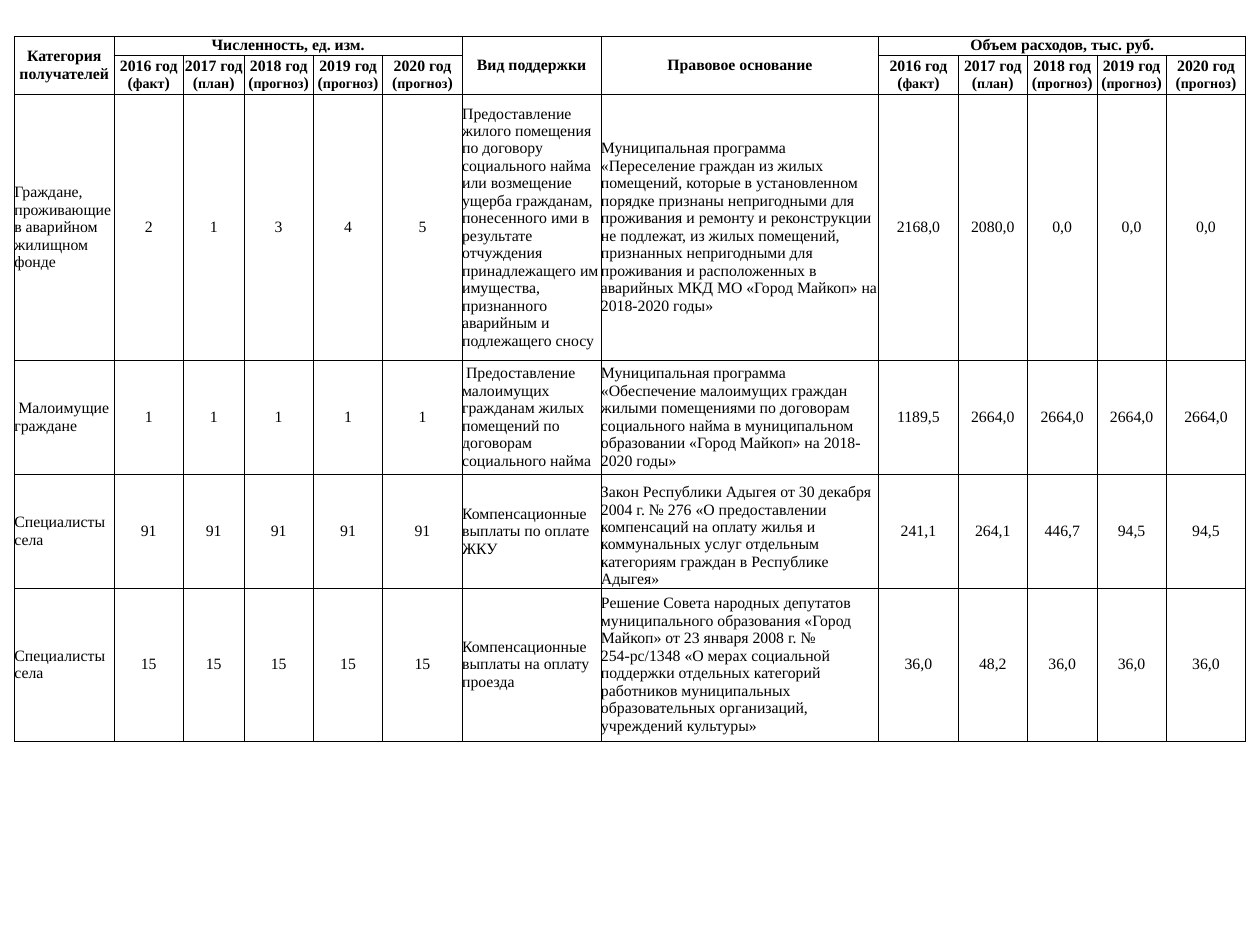
import dataclasses
import lxml.etree
import pptx
import pptx.dml.color
import pptx.enum.text
import pptx.oxml.ns
import pptx.util

Cm = pptx.util.Cm
Pt = pptx.util.Pt
qn = pptx.oxml.ns.qn
align = pptx.enum.text.PP_ALIGN
anchor = pptx.enum.text.MSO_ANCHOR


@dataclasses.dataclass
class Theme:
    face: str = "Times New Roman"
    ink: str = "000000"
    size: float = 9
    small: float = 8
    rule: float = 0.5


theme = Theme()


def border(cell):
    props = cell._tc.get_or_add_tcPr()
    for side in ("lnL", "lnR", "lnT", "lnB"):
        line = lxml.etree.SubElement(props, qn(f"a:{side}"), w=str(Pt(theme.rule)))
        fill = lxml.etree.SubElement(line, qn("a:solidFill"))
        lxml.etree.SubElement(fill, qn("a:srgbClr"), val=theme.ink)


def style(cell, bold, place):
    cell.margin_left = cell.margin_right = cell.margin_top = cell.margin_bottom = 0
    cell.vertical_anchor = anchor.MIDDLE
    par = cell.text_frame.paragraphs[0]
    par.alignment = place
    par.font.name = theme.face
    par.font.size = Pt(theme.size)
    par.font.bold = bold
    par.font.color.rgb = pptx.dml.color.RGBColor.from_string(theme.ink)
    border(cell)
    cell.fill.background()
    return par


deck = pptx.Presentation()
deck.slide_width = Cm(25.4)
deck.slide_height = Cm(19.05)
slide = deck.slides.add_slide(deck.slide_layouts[6])

widths = [2.01, 1.4, 1.22, 1.4, 1.4, 1.6, 2.8, 5.6, 1.6, 1.4, 1.4, 1.4, 1.6]
heights = [0.38, 0.79, 5.36, 2.3, 2.3, 3.08]
years = [("2016", "факт"), ("2017", "план"), ("2018", "прогноз"),
         ("2019", "прогноз"), ("2020", "прогноз")]
heads = [
    (0, "Категория получателей", 1, 0),
    (1, "Численность, ед. изм.", 0, 5),
    (6, "Вид поддержки", 1, 6),
    (7, "Правовое основание", 1, 7),
    (8, "Объем расходов, тыс. руб.", 0, 12),
]
groups = [
    ("Граждане, проживающие в аварийном жилищном фонде",
     ["2", "1", "3", "4", "5"],
     "Предоставление жилого помещения по договору социального найма или "
     "возмещение ущерба гражданам, понесенного ими в результате отчуждения "
     "принадлежащего им имущества, признанного аварийным и подлежащего сносу",
     "Муниципальная программа «Переселение граждан из жилых помещений, которые "
     "в установленном порядке признаны непригодными для проживания и ремонту и "
     "реконструкции не подлежат, из жилых помещений, признанных непригодными "
     "для проживания и расположенных в аварийных МКД МО «Город Майкоп» на "
     "2018-2020 годы»",
     ["2168,0", "2080,0", "0,0", "0,0", "0,0"]),
    (" Малоимущие граждане",
     ["1"] * 5,
     " Предоставление малоимущих гражданам жилых помещений по договорам "
     "социального найма",
     "Муниципальная программа «Обеспечение малоимущих граждан жилыми "
     "помещениями по договорам социального найма в муниципальном образовании "
     "«Город Майкоп» на 2018-2020 годы»",
     ["1189,5"] + ["2664,0"] * 4),
    ("Специалисты села",
     ["91"] * 5,
     "Компенсационные выплаты по оплате ЖКУ",
     "Закон Республики Адыгея от 30 декабря 2004 г. № 276 «О предоставлении "
     "компенсаций на оплату жилья и коммунальных услуг отдельным категориям "
     "граждан в Республике Адыгея»",
     ["241,1", "264,1", "446,7", "94,5", "94,5"]),
    ("Специалисты села",
     ["15"] * 5,
     "Компенсационные выплаты на оплату проезда",
     "Решение Совета народных депутатов муниципального образования «Город "
     "Майкоп» от 23 января 2008 г. № 254-рс/1348 «О мерах социальной поддержки "
     "отдельных категорий работников муниципальных образовательных "
     "организаций, учреждений культуры»",
     ["36,0", "48,2", "36,0", "36,0", "36,0"]),
]

frame = slide.shapes.add_table(len(heights), len(widths), Cm(0.29), Cm(0.73),
                               Cm(sum(widths)), Cm(sum(heights)))
table = frame.table
table.first_row = table.horz_banding = False
for col, width in zip(table.columns, widths):
    col.width = Cm(width)
for row, height in zip(table.rows, heights):
    row.height = Cm(height)

for r in range(len(heights)):
    for c in range(len(widths)):
        place = align.LEFT if r > 1 and c in (0, 6, 7) else align.CENTER
        style(table.cell(r, c), r < 2, place)

for c, text, last, end in heads:
    cell = table.cell(0, c)
    cell.merge(table.cell(last, end))
    cell.text_frame.paragraphs[0].add_run().text = text

for start in (1, 8):
    for c, (year, kind) in enumerate(years, start):
        par = table.cell(1, c).text_frame.paragraphs[0]
        par.add_run().text = f"{year} год ("
        run = par.add_run()
        run.text = kind
        run.font.size = Pt(theme.small)
        par.add_run().text = ")"

for r, (group, counts, aid, law, costs) in enumerate(groups, 2):
    for c, text in enumerate([group, *counts, aid, law, *costs]):
        table.cell(r, c).text_frame.paragraphs[0].add_run().text = text
table.cell(4, 7).vertical_anchor = anchor.BOTTOM

deck.save("out.pptx")
